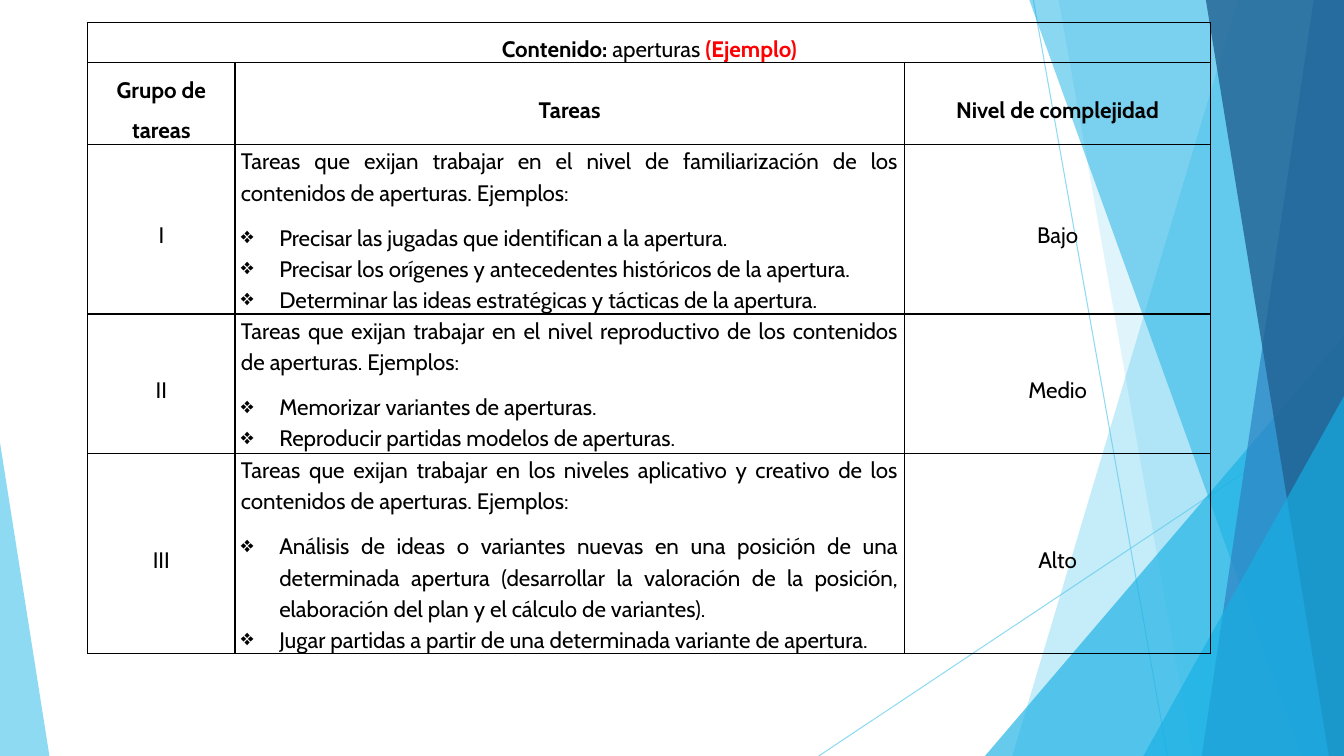
from dataclasses import dataclass

from lxml.etree import SubElement
from pptx import Presentation
from pptx.dml.color import RGBColor
from pptx.enum.shapes import MSO_CONNECTOR as CONN, MSO_SHAPE as SHAPE
from pptx.enum.text import MSO_ANCHOR as ANCHOR, PP_ALIGN as ALIGN
from pptx.oxml.ns import qn
from pptx.util import Emu, Inches, Pt

SLIDE_W, SLIDE_H = Inches(13.33), Inches(7.5)
COLORS = {
    "sky": "5FCBEF", "cyan": "17B0E4", "blue": "2E83C3", "navy": "226292",
    "black": "000000", "red": "FF0000",
}


@dataclass
class Ray:
    """Thin line between two points, in percent of the slide."""
    x1: float
    y1: float
    x2: float
    y2: float


@dataclass
class Band:
    """Full-height band with a slanted left edge, reaching the right side."""
    top_x: float
    bottom_x: float
    color: str
    alpha: int


@dataclass
class Wedge:
    """Right triangle standing on the bottom edge; apex is 0 (left) or 1 (right)."""
    left: float
    top: float
    width: float
    apex: int
    color: str
    alpha: int


@dataclass
class TaskGroup:
    number: str
    intro: str
    examples: list[str]
    level: str


DECOR = [
    Ray(76.89, 0, 86.87, 100),
    Ray(100, 53.73, 60.92, 100),
    Band(92.12, 75.32, "sky", 36),
    Band(78.77, 88.75, "sky", 20),
    Wedge(73.29, 44.4, 26.71, 1, "cyan", 66),
    Band(76.59, 96.85, "cyan", 50),
    Band(97.75, 89.42, "blue", 70),
    Band(89.72, 98.87, "navy", 80),
    Wedge(85.07, 52.4, 14.93, 1, "cyan", 66),
    Wedge(0, 58.53, 3.68, 0, "sky", 70),
]

TABLE_LEFT, TABLE_TOP = 6.53, 2.93
COL_SHARES = [10.95, 49.81, 22.81]
ROW_SHARES = [5.3, 10.8, 22.4, 18.4, 26.4]
HEADERS = ["Grupo de tareas", "Tareas", "Nivel de complejidad"]
GROUPS = [
    TaskGroup(
        "I",
        "Tareas que exijan trabajar en el nivel de familiarización de los "
        "contenidos de aperturas. Ejemplos:",
        ["Precisar las jugadas que identifican a la apertura.",
         "Precisar los orígenes y antecedentes históricos de la apertura.",
         "Determinar las ideas estratégicas y tácticas de la apertura."],
        "Bajo"),
    TaskGroup(
        "II",
        "Tareas que exijan trabajar en el nivel reproductivo de los contenidos "
        "de aperturas. Ejemplos:",
        ["Memorizar variantes de aperturas.",
         "Reproducir partidas modelos de aperturas."],
        "Medio"),
    TaskGroup(
        "III",
        "Tareas que exijan trabajar en los niveles aplicativo y creativo de los "
        "contenidos de aperturas. Ejemplos:",
        ["Análisis de ideas o variantes nuevas en una posición de una "
         "determinada apertura (desarrollar la valoración de la posición, "
         "elaboración del plan y el cálculo de variantes).",
         "Jugar partidas a partir de una determinada variante de apertura."],
        "Alto"),
]


def across(share: float) -> Emu:
    return Emu(round(SLIDE_W * share / 100))


def down(share: float) -> Emu:
    return Emu(round(SLIDE_H * share / 100))


def rgb(name: str) -> RGBColor:
    return RGBColor.from_string(COLORS[name])


def set_alpha(sp, percent: int) -> None:
    for clr in sp.element.iter(qn("a:srgbClr")):
        SubElement(clr, qn("a:alpha"), val=str(percent * 1000))


def draw_ray(shapes, ray: Ray) -> None:
    line = shapes.add_connector(CONN.STRAIGHT, across(ray.x1), down(ray.y1),
                                across(ray.x2), down(ray.y2))
    line.line.color.rgb = rgb("sky")
    line.line.width = Pt(0.75)
    set_alpha(line, 70)
    SubElement(line.element.find(qn("p:spPr")), qn("a:effectLst"))


def draw_area(shapes, area: Band | Wedge) -> None:
    if isinstance(area, Band):
        outline = shapes.build_freeform(across(area.top_x), 0)
        outline.add_line_segments([(SLIDE_W, 0), (SLIDE_W, SLIDE_H),
                                   (across(area.bottom_x), SLIDE_H)])
        sp = outline.convert_to_shape()
    else:
        sp = shapes.add_shape(SHAPE.ISOSCELES_TRIANGLE, across(area.left), down(area.top),
                              across(area.width), down(100 - area.top))
        sp.adjustments[0] = area.apex
    sp.shadow.inherit = False
    sp.fill.solid()
    sp.fill.fore_color.rgb = rgb(area.color)
    sp.line.fill.background()
    set_alpha(sp, area.alpha)


def write(p, text: str, *, bold: bool = False, color: str = "black",
          align: ALIGN = ALIGN.CENTER, spacing: float = 1.5, after: int = 10,
          bullet: str = "") -> None:
    """Add a run to the paragraph and set the paragraph's format."""
    p.alignment, p.line_spacing, p.space_after = align, spacing, Pt(after)
    r = p.add_run()
    r.text = text
    r.font.name, r.font.size, r.font.bold = "Cabin", Pt(16), bold
    r.font.color.rgb = rgb(color)
    if bullet:
        pPr = p._p.get_or_add_pPr()
        pPr.set("marL", str(Inches(0.38)))
        pPr.set("indent", str(-Inches(0.38)))
        SubElement(pPr, qn("a:buChar"), char=bullet)


def format_cell(cell) -> None:
    """Clear the fill, set the margins and draw a black border."""
    cell.fill.background()
    cell.margin_left = cell.margin_right = Inches(0.06)
    cell.margin_top = cell.margin_bottom = 0
    cell.vertical_anchor = ANCHOR.MIDDLE
    tcPr = cell._tc.get_or_add_tcPr()
    for i, side in enumerate(("lnL", "lnR", "lnT", "lnB")):
        ln = SubElement(tcPr, qn(f"a:{side}"), w=str(Pt(1)))
        SubElement(SubElement(ln, qn("a:solidFill")), qn("a:srgbClr"), val=COLORS["black"])
        tcPr.insert(i, ln)


def draw_table(shapes) -> None:
    table = shapes.add_table(
        len(ROW_SHARES), len(COL_SHARES), across(TABLE_LEFT), down(TABLE_TOP),
        across(sum(COL_SHARES)), down(sum(ROW_SHARES))).table
    table.first_row = table.horz_banding = False
    for col, share in zip(table.columns, COL_SHARES):
        col.width = across(share)
    for row, share in zip(table.rows, ROW_SHARES):
        row.height = down(share)
    for cell in table.iter_cells():
        format_cell(cell)

    title = table.cell(0, 0)
    title.merge(table.cell(0, 2))
    p = title.text_frame.paragraphs[0]
    write(p, "Contenido: ", bold=True)
    write(p, "aperturas ")
    write(p, "(Ejemplo)", bold=True, color="red")
    for c, header in enumerate(HEADERS):
        write(table.cell(1, c).text_frame.paragraphs[0], header, bold=True)
    for r, group in enumerate(GROUPS, start=2):
        write(table.cell(r, 0).text_frame.paragraphs[0], group.number)
        write(table.cell(r, 2).text_frame.paragraphs[0], group.level)
        tasks = table.cell(r, 1)
        tasks.vertical_anchor = ANCHOR.TOP
        tf = tasks.text_frame
        write(tf.paragraphs[0], group.intro, align=ALIGN.JUSTIFY, spacing=1.15)
        for example in group.examples:
            write(tf.add_paragraph(), example, align=ALIGN.JUSTIFY, spacing=1.15,
                  after=0, bullet="❖")


def main() -> None:
    prs = Presentation()
    prs.slide_width, prs.slide_height = SLIDE_W, SLIDE_H
    shapes = prs.slides.add_slide(prs.slide_layouts[6]).shapes
    for item in DECOR:
        if isinstance(item, Ray):
            draw_ray(shapes, item)
        else:
            draw_area(shapes, item)
    draw_table(shapes)
    prs.save("out.pptx")


if __name__ == "__main__":
    main()
